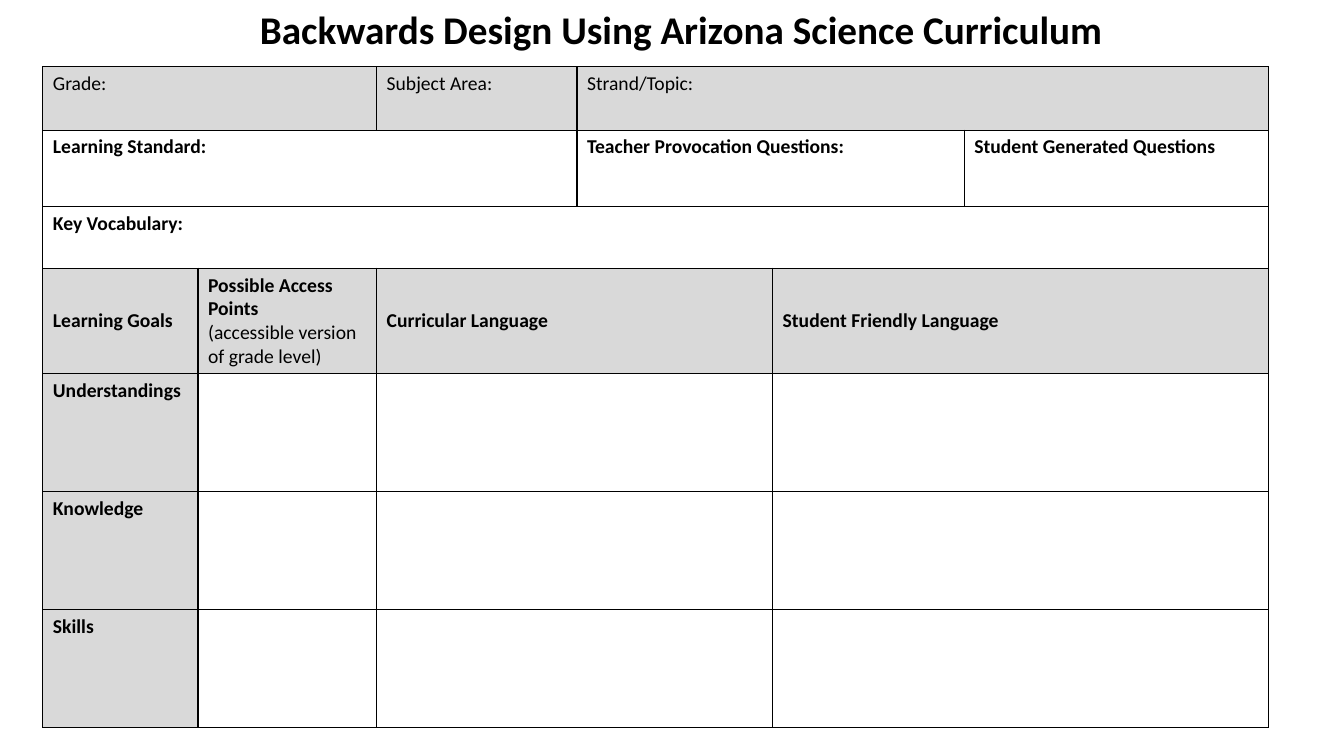
"""Build a one-slide backwards design planning template for science."""
from lxml.etree import SubElement
from pptx import Presentation
from pptx.dml.color import RGBColor
from pptx.enum.text import MSO_ANCHOR, MSO_AUTO_SIZE
from pptx.oxml.ns import qn
from pptx.util import Cm, Pt

BLACK = RGBColor(0x00, 0x00, 0x00)
GREY = RGBColor(0xD9, 0xD9, 0xD9)
WHITE = RGBColor(0xFF, 0xFF, 0xFF)

COL_WIDTHS = [3.91, 4.5, 5.05, 4.93, 4.83, 7.67]
ROW_HEIGHTS = [1.6, 1.93, 1.55, 2.36, 2.97, 2.97, 2.97]
HEADING_ROW = 3


def add_text(p, text, size=14, bold=True):
    r = p.add_run()
    r.text = text
    r.font.name = "Calibri"
    r.font.size = Pt(size)
    r.font.bold = bold
    r.font.color.rgb = BLACK


def add_borders(cell):
    tcPr = cell._tc.get_or_add_tcPr()
    for side in ("a:lnL", "a:lnR", "a:lnT", "a:lnB"):
        ln = SubElement(tcPr, qn(side), w=str(Pt(1)))
        fill = SubElement(ln, qn("a:solidFill"))
        SubElement(fill, qn("a:srgbClr"), val=str(BLACK))


prs = Presentation()
prs.slide_width = Cm(33.87)
prs.slide_height = Cm(19.05)
s = prs.slides.add_slide(prs.slide_layouts[6])

frame = s.shapes.add_table(len(ROW_HEIGHTS), len(COL_WIDTHS), Cm(1.08), Cm(1.68),
                           Cm(sum(COL_WIDTHS)), Cm(sum(ROW_HEIGHTS)))
table = frame.table
for column, width in zip(table.columns, COL_WIDTHS):
    column.width = Cm(width)
for row, height in zip(table.rows, ROW_HEIGHTS):
    row.height = Cm(height)

layout = [
    [("Grade:", 2, GREY), ("Subject Area:", 1, GREY), ("Strand/Topic:", 3, GREY)],
    [("Learning Standard:", 3, WHITE), ("Teacher Provocation Questions:", 2, WHITE),
     ("Student Generated Questions", 1, WHITE)],
    [("Key Vocabulary:", 6, WHITE)],
    [("Learning Goals", 1, GREY), ("Possible Access Points", 1, GREY),
     ("Curricular Language", 2, GREY), ("Student Friendly Language", 2, GREY)],
]
for goal in ("Understandings", "Knowledge", "Skills"):
    layout.append([(goal, 1, GREY), ("", 1, WHITE), ("", 2, WHITE), ("", 2, WHITE)])

for i, entries in enumerate(layout):
    j = 0
    for text, span, color in entries:
        for k in range(j, j + span):
            cell = table.cell(i, k)
            add_borders(cell)
            cell.fill.solid()
            cell.fill.fore_color.rgb = color
        cell = table.cell(i, j)
        if span > 1:
            cell.merge(table.cell(i, j + span - 1))
        if i == HEADING_ROW:
            cell.vertical_anchor = MSO_ANCHOR.MIDDLE
        if text:
            add_text(cell.text_frame.paragraphs[0], text, bold=i > 0)
        j += span

access_points = table.cell(HEADING_ROW, 1).text_frame
add_text(access_points.add_paragraph(), "(accessible version of grade level)", bold=False)

title = s.shapes.add_textbox(Cm(6.3), Cm(0), Cm(22), Cm(1.45))
tf = title.text_frame
tf.word_wrap = False
tf.auto_size = MSO_AUTO_SIZE.SHAPE_TO_FIT_TEXT
add_text(tf.paragraphs[0], "Backwards Design Using Arizona Science Curriculum", size=28)

prs.save("out.pptx")
